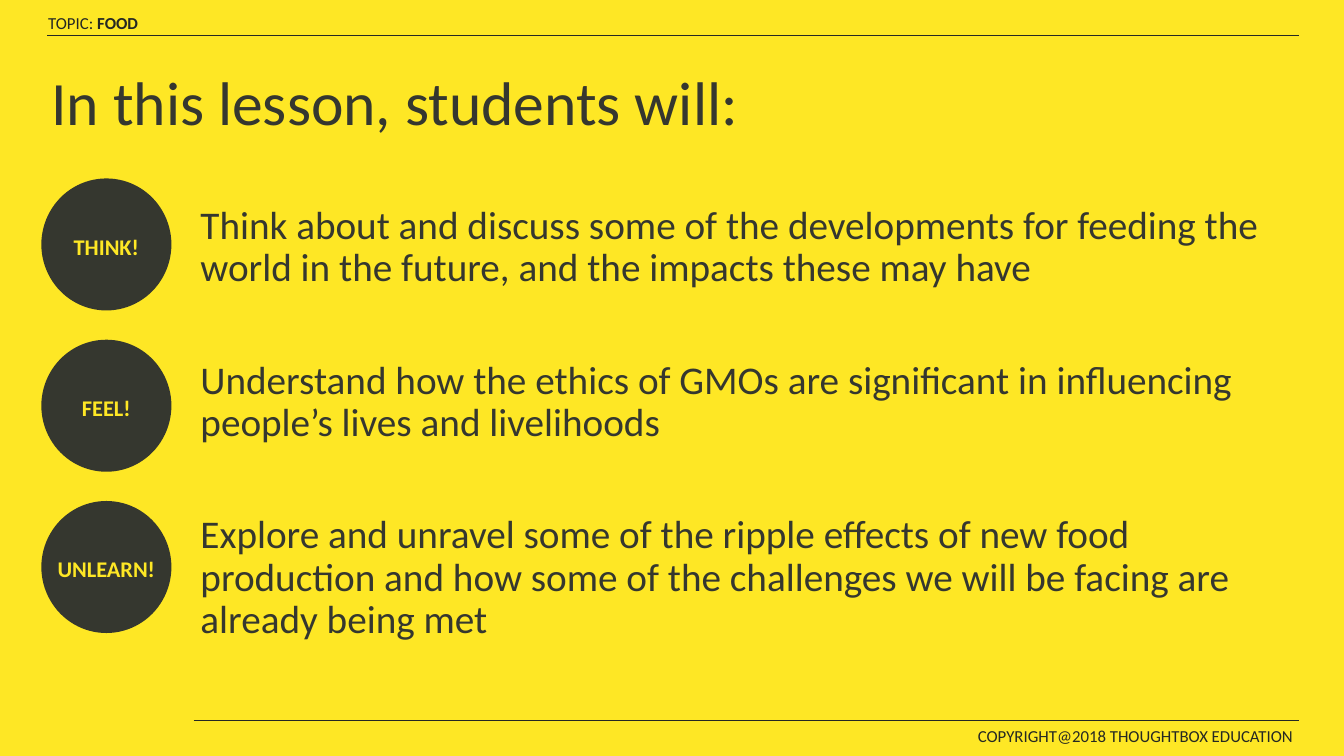
"""Build the lesson aims slide: a title and three labelled aims on yellow."""
from lxml.etree import SubElement
from pptx import Presentation
from pptx.dml.color import RGBColor
from pptx.enum.shapes import MSO_CONNECTOR, MSO_SHAPE
from pptx.enum.text import MSO_ANCHOR, PP_ALIGN
from pptx.oxml.ns import qn
from pptx.util import Inches, Pt

COLOURS = {"yellow": "FEE725", "charcoal": "35372F", "ink": "252823"}
LEFT, RIGHT = 0.41, 12.83
RULE_RIGHT = 12.88
CIRCLE_TOP, CIRCLE_STEP = 1.77, 1.6
CIRCLE_WIDTH, CIRCLE_HEIGHT = 1.29, 1.31
AIMS_LEFT, AIMS_TOP = 1.89, 1.99
AIMS = [
    ("THINK!", "Think about and discuss some of the developments for feeding the world in the future, "
               "and the impacts these may have"),
    ("FEEL!", "Understand how the ethics of GMOs are significant in influencing people’s lives and livelihoods"),
    ("UNLEARN!", "Explore and unravel some of the ripple effects of new food production and how some of "
                 "the challenges we will be facing are already being met"),
]


def style(paragraph, size, colour, bold=False):
    """Format every run of a paragraph."""
    for span in paragraph.runs:
        span.font.name = "Calibri"
        span.font.size = Pt(size)
        span.font.bold = bold
        span.font.color.rgb = RGBColor.from_string(COLOURS[colour])


def add_box(left, top, width, height, wrap=True):
    """Add a text box and return its text frame."""
    box = page.shapes.add_textbox(Inches(left), Inches(top), Inches(width), Inches(height))
    box.text_frame.word_wrap = wrap
    return box.text_frame


deck = Presentation()
deck.slide_width, deck.slide_height = Inches(13.33), Inches(7.5)
page = deck.slides.add_slide(deck.slide_layouts[5])
page.background.fill.solid()
page.background.fill.fore_color.rgb = RGBColor.from_string(COLOURS["yellow"])

topic = add_box(0.38, 0.08, 1.13, 0.3, wrap=False).paragraphs[0]
topic.add_run().text = "TOPIC: "
topic.add_run().text = "FOOD"
style(topic, 12, "ink")
topic.runs[1].font.bold = True

credit = add_box(9.6, 7.15, 3.4, 0.31)
credit.text = "COPYRIGHT@2018 THOUGHTBOX EDUCATION"
style(credit.paragraphs[0], 12, "ink")

for rule_left, rule_top in [(0.47, 0.35), (1.92, 7.15)]:
    rule = page.shapes.add_connector(
        MSO_CONNECTOR.STRAIGHT, Inches(rule_left), Inches(rule_top), Inches(RULE_RIGHT), Inches(rule_top))
    rule.line.color.rgb = RGBColor.from_string(COLOURS["ink"])
    rule.line.width = Pt(1)
    SubElement(rule._element.spPr, qn("a:effectLst"))

title = page.shapes.title
title.left, title.top = Inches(LEFT), Inches(0.4)
title.width, title.height = Inches(RIGHT - LEFT), Inches(1.3)
title.text_frame.text = "In this lesson, students will:"
title.text_frame.vertical_anchor = MSO_ANCHOR.MIDDLE
heading = title.text_frame.paragraphs[0]
heading.alignment = PP_ALIGN.LEFT
heading.line_spacing = 0.9
style(heading, 44, "charcoal")

aims = add_box(AIMS_LEFT, AIMS_TOP, RIGHT - AIMS_LEFT, 5.02)
aims.text = "\n".join(aim for label, aim in AIMS)
for number, paragraph in enumerate(aims.paragraphs):
    paragraph.line_spacing = 0.9
    paragraph.space_before = Pt(50 if number else 0)
    style(paragraph, 28, "charcoal")

for row, (label, aim) in enumerate(AIMS):
    circle = page.shapes.add_shape(
        MSO_SHAPE.OVAL, Inches(LEFT), Inches(CIRCLE_TOP + row * CIRCLE_STEP),
        Inches(CIRCLE_WIDTH), Inches(CIRCLE_HEIGHT))
    circle.shadow.inherit = False
    circle.fill.solid()
    circle.fill.fore_color.rgb = RGBColor.from_string(COLOURS["charcoal"])
    circle.line.fill.background()
    frame = circle.text_frame
    frame.word_wrap = False
    frame.vertical_anchor = MSO_ANCHOR.MIDDLE
    frame.text = label
    frame.paragraphs[0].alignment = PP_ALIGN.CENTER
    frame.paragraphs[0].line_spacing = 1.15
    style(frame.paragraphs[0], 16, "yellow", bold=True)

deck.save("out.pptx")
